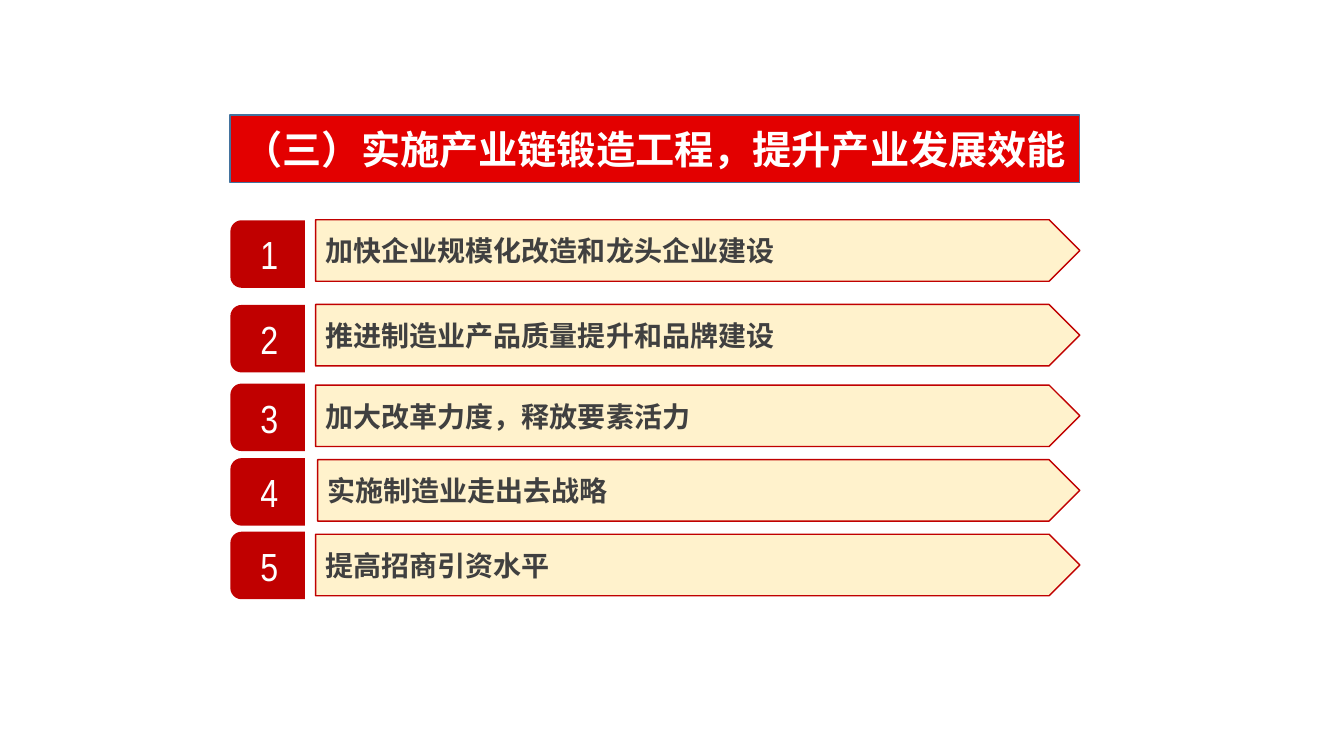
from lxml import etree
from pptx import Presentation, util as u
from pptx.dml.color import RGBColor
from pptx.enum import shapes, text
from pptx.oxml.ns import qn

COLORS = {"badge": "C00000", "bar": "FFF2CC", "ink": "404040", "white": "FFFFFF",
          "title": "E30000", "title_edge": "760303", "title_line": "43739E"}
ROWS = [
    ("加快企业规模化改造和龙头企业建设", 2.15, 2.18, 3.13),
    ("推进制造业产品质量提升和品牌建设", 2.99, 3.02, 3.13),
    ("加大改革力度，释放要素活力", 3.77, 3.82, 3.13),
    ("实施制造业走出去战略", 4.51, 4.56, 3.15),
    ("提高招商引资水平", 5.24, 5.3, 3.13),
]
BAR_RIGHT = 10.71


class Deck:
    """Holds the style and the current slide."""

    def __init__(self):
        self.prs = Presentation()
        self.prs.slide_width, self.prs.slide_height = u.Inches(13.33), u.Inches(7.5)
        self.s = self.prs.slides.add_slide(self.prs.slide_layouts[6])

    def color(self, name):
        return RGBColor.from_string(COLORS[name])

    def shape(self, kind, box, fill, line=None):
        sp = self.s.shapes.add_shape(kind, *map(u.Inches, box))
        sp.shadow.inherit = False
        sp.fill.solid()
        sp.fill.fore_color.rgb = self.color(fill)
        if line:
            sp.line.color.rgb = self.color(line)
            sp.line.width = u.Pt(1)
        else:
            sp.line.fill.background()
        return sp

    def label(self, sp, words, size, font, color, align, bold=False):
        tf = sp.text_frame
        tf.word_wrap = True
        tf.vertical_anchor = text.MSO_ANCHOR.MIDDLE
        p = tf.paragraphs[0]
        p.text = words
        p.alignment = align
        p.font.size, p.font.name, p.font.bold = u.Pt(size), font, bold
        p.font.color.rgb = self.color(color)
        props = p._p.pPr.find(qn("a:defRPr"))
        etree.SubElement(props, qn("a:ea")).set("typeface", "Noto Sans CJK SC")

    def title(self, words):
        sp = self.shape(shapes.MSO_SHAPE.FLOWCHART_PROCESS, (2.28, 1.14, 8.43, 0.67),
                        "title", "title_line")
        sp.fill.gradient()
        sp.fill.gradient_angle = 270
        stops = ((0.99, "title"), (1, "title_edge"))
        for stop, (position, name) in zip(sp.fill.gradient_stops, stops):
            stop.position = position
            stop.color.rgb = self.color(name)
        self.label(sp, words, 28, "Calibri", "white", text.PP_ALIGN.CENTER, True)

    def badge(self, number, top):
        sp = self.shape(shapes.MSO_SHAPE.ROUND_2_SAME_RECTANGLE, (2.32, top, 0.67, 0.74), "badge")
        sp.rotation = 270
        sp.text_frame._txBody.bodyPr.set("vert", "vert")
        self.label(sp, str(number), 28, "Arial Narrow", "white", text.PP_ALIGN.CENTER)

    def bar(self, words, left, top):
        sp = self.shape(shapes.MSO_SHAPE.PENTAGON, (left, top, BAR_RIGHT - left, 0.61),
                        "bar", "badge")
        self.label(sp, words, 20, "Noto Sans CJK SC", "ink", text.PP_ALIGN.LEFT, True)


def main():
    deck = Deck()
    deck.title("（三）实施产业链锻造工程，提升产业发展效能")
    for number, (words, badge_top, bar_top, bar_left) in enumerate(ROWS, 1):
        deck.badge(number, badge_top)
        deck.bar(words, bar_left, bar_top)
    deck.prs.save("out.pptx")


if __name__ == "__main__":
    main()
